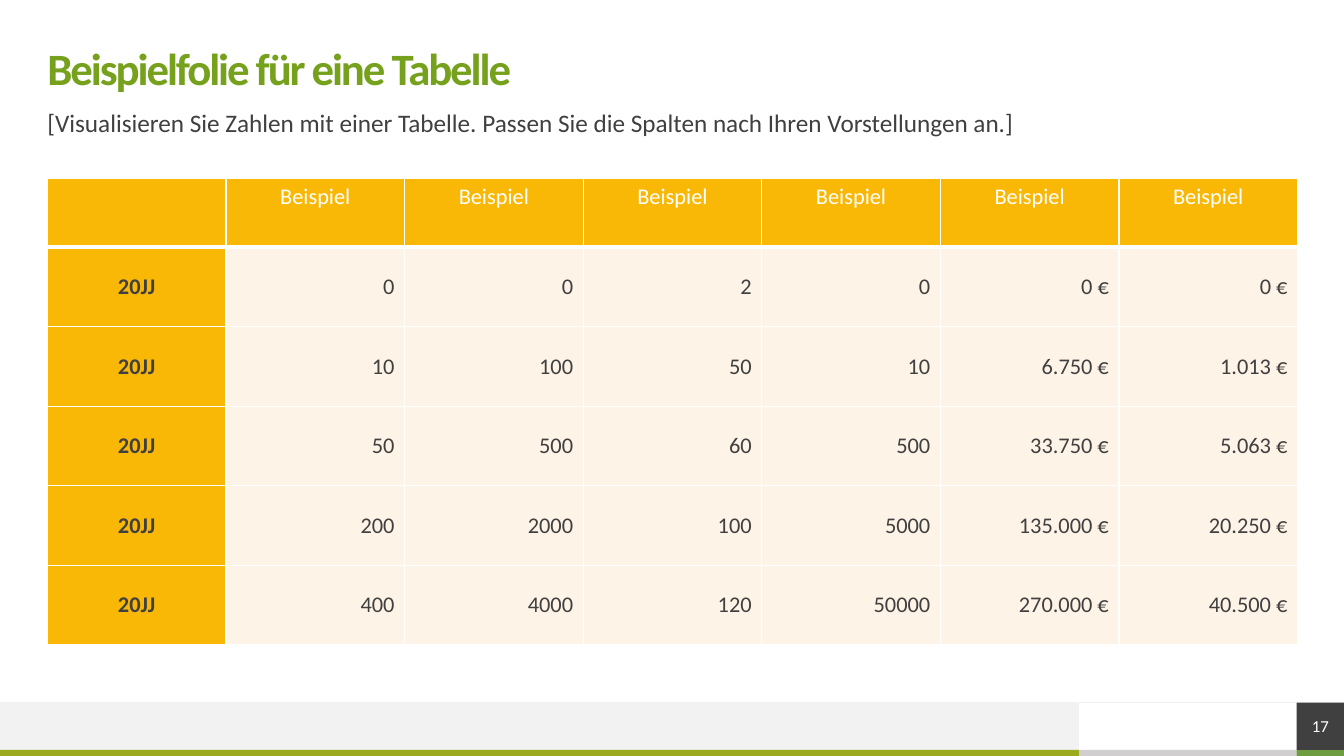
from lxml.etree import SubElement
from pptx import Presentation
from pptx.dml.color import RGBColor
from pptx.enum.shapes import MSO_CONNECTOR as Connector, MSO_SHAPE as Shape
from pptx.enum.text import MSO_ANCHOR as Anchor, MSO_AUTO_SIZE as AutoSize, PP_ALIGN as Align
from pptx.oxml.ns import qn
from pptx.util import Inches, Pt

WHITE = RGBColor(0xFF, 0xFF, 0xFF)
DARK = RGBColor(0x40, 0x40, 0x40)
GREEN = RGBColor(0x75, 0xA1, 0x1D)
AMBER = RGBColor(0xFA, 0xB8, 0x06)
CREAM = RGBColor(0xFE, 0xF3, 0xE7)
PALE_GREY = RGBColor(0xF2, 0xF2, 0xF2)
GREY = RGBColor(0xD0, 0xCE, 0xCE)
OLIVE = RGBColor(0x9C, 0xAA, 0x20)
LEAF = RGBColor(0x6D, 0x9D, 0x40)

FONT = "Calibri"
HEADER = [""] + ["Beispiel"] * 6
YEARS = [
    ["20JJ", "0", "0", "2", "0", "0 €", "0 €"],
    ["20JJ", "10", "100", "50", "10", "6.750 €", "1.013 €"],
    ["20JJ", "50", "500", "60", "500", "33.750 €", "5.063 €"],
    ["20JJ", "200", "2000", "100", "5000", "135.000 €", "20.250 €"],
    ["20JJ", "400", "4000", "120", "50000", "270.000 €", "40.500 €"],
]


def write(frame, text, size, color, align=Align.LEFT, bold=False):
    """Write one formatted run into the first paragraph and return the run."""
    paragraph = frame.paragraphs[0]
    paragraph.alignment = align
    run = paragraph.add_run()
    run.text = text
    run.font.name = FONT
    run.font.size = Pt(size)
    run.font.bold = bold
    run.font.color.rgb = color
    return run


def prepare_frame(frame, anchor):
    """Give a text frame no margins, wrapping and a fixed size."""
    frame.auto_size = AutoSize.NONE
    frame.word_wrap = True
    frame.vertical_anchor = anchor
    frame.margin_left = frame.margin_top = frame.margin_right = frame.margin_bottom = 0


def add_block(slide, left, top, width, height, color):
    """Add a plain filled rectangle."""
    block = slide.shapes.add_shape(
        Shape.RECTANGLE, Inches(left), Inches(top), Inches(width), Inches(height))
    block.shadow.inherit = False
    block.fill.solid()
    block.fill.fore_color.rgb = color
    block.line.fill.background()
    return block


def add_heading(slide, left, top, width):
    """Place the title and the sentence below it."""
    title = slide.shapes.title
    title.left, title.top = Inches(left), Inches(top)
    title.width, title.height = Inches(width), Inches(0.47)
    prepare_frame(title.text_frame, Anchor.MIDDLE)
    run = write(title.text_frame, "Beispielfolie für eine Tabelle", 32, GREEN, bold=True)
    run.font._element.set("spc", "-150")
    title.text_frame.paragraphs[0].line_spacing = 0.9

    hint = slide.shapes.add_textbox(
        Inches(left), Inches(top + 0.63), Inches(width), Inches(0.39))
    prepare_frame(hint.text_frame, Anchor.TOP)
    write(hint.text_frame,
          "[Visualisieren Sie Zahlen mit einer Tabelle. "
          "Passen Sie die Spalten nach Ihren Vorstellungen an.]", 18, DARK)
    hint.text_frame.paragraphs[0].line_spacing = 0.9


def set_borders(cell, top, bottom):
    """Draw white cell borders, 1 pt at the sides and as given above and below."""
    properties = cell._tc.get_or_add_tcPr()
    for position, (side, points) in enumerate(
            [("lnL", 1), ("lnR", 1), ("lnT", top), ("lnB", bottom)]):
        border = SubElement(properties, qn(f"a:{side}"), w=str(Pt(points)))
        fill = SubElement(border, qn("a:solidFill"))
        SubElement(fill, qn("a:srgbClr"), val=str(WHITE))
        properties.insert(position, border)


def add_figures(slide, left, top, width):
    """Place the table of yearly figures."""
    rows = [HEADER] + YEARS
    header_height, year_height = 0.68, 0.79
    height = header_height + year_height * len(YEARS)
    figures = slide.shapes.add_table(
        len(rows), len(HEADER), Inches(left), Inches(top), Inches(width), Inches(height)).table
    for column in figures.columns:
        column.width = Inches(width / len(HEADER))
    for row_index, values in enumerate(rows):
        is_header = row_index == 0
        figures.rows[row_index].height = Inches(header_height if is_header else year_height)
        for column_index, value in enumerate(values):
            is_label = column_index == 0
            cell = figures.cell(row_index, column_index)
            cell.fill.solid()
            cell.fill.fore_color.rgb = AMBER if is_header or is_label else CREAM
            cell.vertical_anchor = Anchor.TOP if is_header else Anchor.MIDDLE
            set_borders(cell, 3 if row_index == 1 else 1, 3 if is_header else 1)
            if value:
                write(cell.text_frame, value, 16, WHITE if is_header else DARK,
                      Align.CENTER if is_header or is_label else Align.RIGHT,
                      is_label)


def add_footer(slide, top, width):
    """Place the bottom bands, the dividing line and the page number."""
    band_width, number_size, strip_height = 10.7, 0.47, 0.06
    number_left = width - number_size
    strip_top = top + number_size
    add_block(slide, band_width, strip_top, number_left - band_width, strip_height, GREY)
    add_block(slide, 0, top, band_width, number_size, PALE_GREY)
    add_block(slide, 0, strip_top, band_width, strip_height, OLIVE)
    add_block(slide, number_left, strip_top, number_size, strip_height, LEAF)

    divider = slide.shapes.add_connector(
        Connector.STRAIGHT, Inches(width), Inches(top), Inches(0), Inches(top))
    divider.line.color.rgb = PALE_GREY
    divider.line.width = Pt(0.5)
    SubElement(divider._element.spPr, qn("a:effectLst"))

    page_number = add_block(slide, number_left, top, number_size, number_size, DARK)
    prepare_frame(page_number.text_frame, Anchor.MIDDLE)
    write(page_number.text_frame, "17", 12, WHITE, Align.CENTER)


def main():
    """Build and save the slide."""
    deck = Presentation()
    deck.slide_width, deck.slide_height = Inches(13.33), Inches(7.5)
    slide = deck.slides.add_slide(deck.slide_layouts[5])
    add_footer(slide, 6.97, 13.33)
    add_heading(slide, 0.47, 0.47, 12.4)
    add_figures(slide, 0.47, 1.77, 12.4)
    deck.save("out.pptx")


if __name__ == "__main__":
    main()
